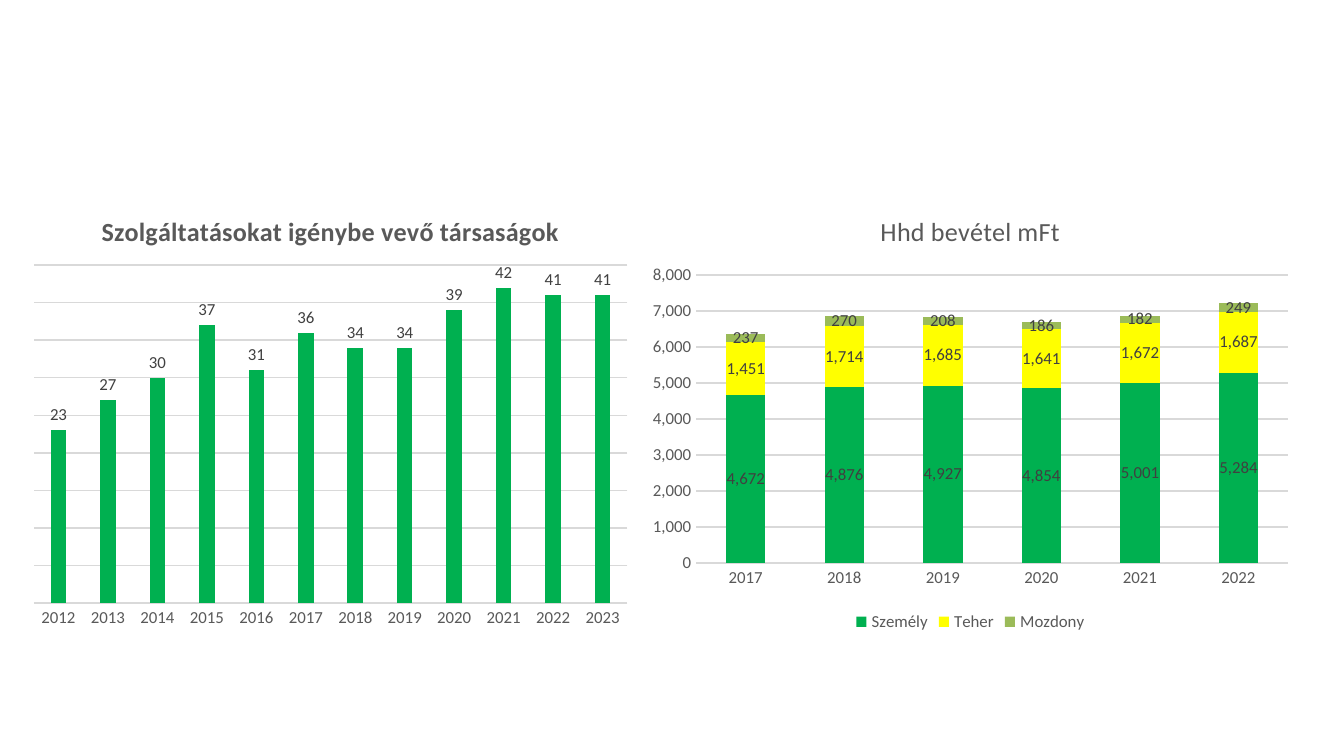
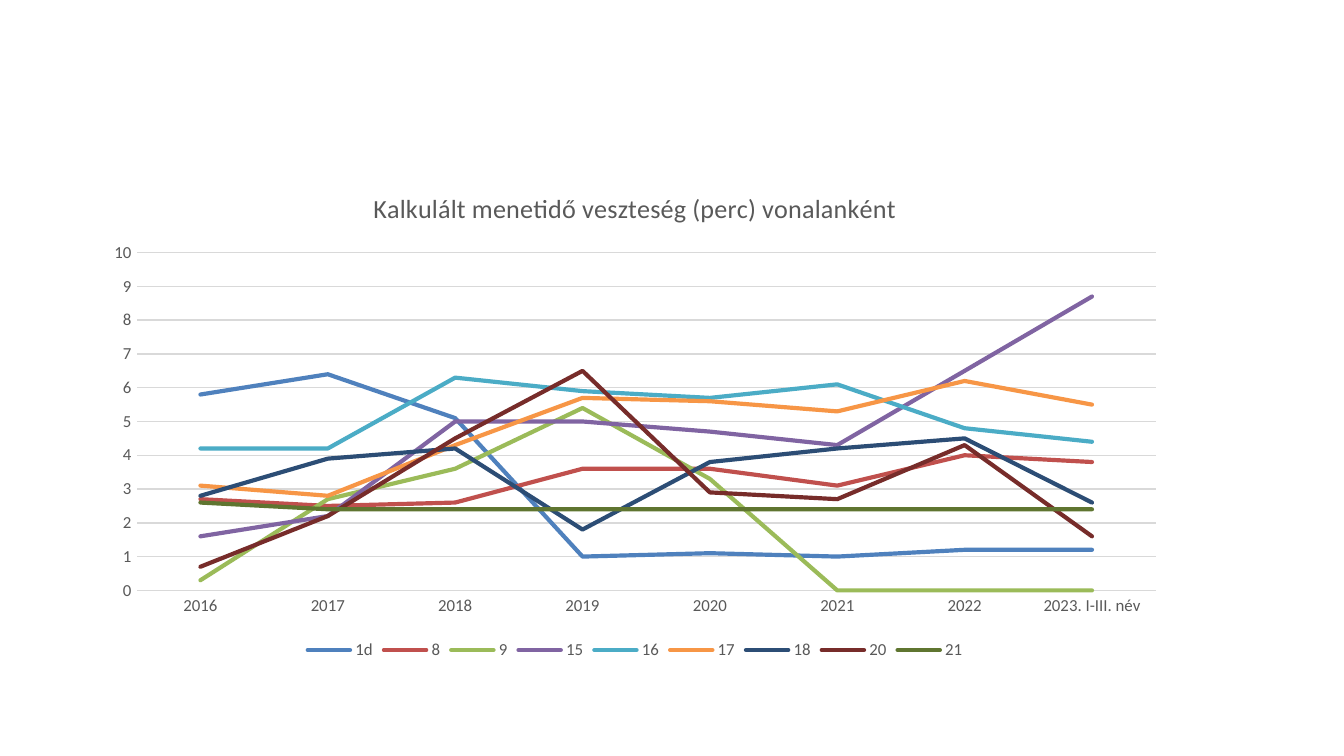
from pptx import Presentation
from pptx import util as u
from pptx.chart import data as chart_data
from pptx.dml import color as dml
from pptx.enum import chart as kinds

FONT = "Calibri"
GREY, DARK, GRID = "595959", "404040", "D9D9D9"
GREEN, YELLOW, OLIVE = "00B050", "FFFF00", "9BBB59"

COMPANY_YEARS = range(2012, 2024)
COMPANIES = [("Series 1", GREEN, [23, 27, 30, 37, 31, 36, 34, 34, 39, 42, 41, 41])]

REVENUE_YEARS = range(2017, 2023)
REVENUE = [
    ("Személy", GREEN, [4672, 4876, 4927, 4854, 5001, 5284]),
    ("Teher", YELLOW, [1451, 1714, 1685, 1641, 1672, 1687]),
    ("Mozdony", OLIVE, [237, 270, 208, 186, 182, 249]),
]

LOSS_PERIODS = [*range(2016, 2023), "2023. I-III. név"]
LOSS = [
    ("1d", "4F81BD", [5.8, 6.4, 5.1, 1, 1.1, 1, 1.2, 1.2]),
    ("8", "C0504D", [2.7, 2.5, 2.6, 3.6, 3.6, 3.1, 4, 3.8]),
    ("9", OLIVE, [0.3, 2.7, 3.6, 5.4, 3.3, 0, 0, 0]),
    ("15", "8064A2", [1.6, 2.2, 5, 5, 4.7, 4.3, 6.5, 8.7]),
    ("16", "4BACC6", [4.2, 4.2, 6.3, 5.9, 5.7, 6.1, 4.8, 4.4]),
    ("17", "F79646", [3.1, 2.8, 4.3, 5.7, 5.6, 5.3, 6.2, 5.5]),
    ("18", "2C4D75", [2.8, 3.9, 4.2, 1.8, 3.8, 4.2, 4.5, 2.6]),
    ("20", "772C2A", [0.7, 2.2, 4.5, 6.5, 2.9, 2.7, 4.3, 1.6]),
    ("21", "5F7530", [2.6, 2.4, 2.4, 2.4, 2.4, 2.4, 2.4, 2.4]),
]


def paint(target, color):
    """Give a shape format or a line one solid colour."""
    target.fill.solid()
    target.fill.fore_color.rgb = dml.RGBColor.from_string(color)


def style_font(font, size, color, bold=False):
    font.name, font.size, font.bold = FONT, u.Pt(size), bold
    font.color.rgb = dml.RGBColor.from_string(color)


def style_line(line, color, width):
    paint(line, color)
    line.width = u.Pt(width)


def style_axes(chart, top, step, number_format):
    for axis in (chart.category_axis, chart.value_axis):
        axis.major_tick_mark = axis.minor_tick_mark = kinds.XL_TICK_MARK.NONE
        style_font(axis.tick_labels.font, 9, GREY)
    style_line(chart.category_axis.format.line, GRID, 0.75)

    values = chart.value_axis
    values.minimum_scale, values.maximum_scale, values.major_unit = 0, top, step
    values.format.line.fill.background()
    values.has_major_gridlines = True
    style_line(values.major_gridlines.format.line, GRID, 0.75)
    values.tick_labels.number_format = number_format
    values.tick_labels.number_format_is_linked = False


def add_legend(chart):
    chart.has_legend = True
    chart.legend.position = kinds.XL_LEGEND_POSITION.BOTTOM
    chart.legend.include_in_layout = False
    style_font(chart.legend.font, 9, GREY)


def add_chart(page, box, kind, title, categories, rows, top, step,
              number_format="General", bold=False):
    """Place a titled chart with styled axes in a box of inches."""
    data = chart_data.CategoryChartData(number_format=number_format)
    data.categories = [str(category) for category in categories]
    for name, _, values in rows:
        data.add_series(name, values)
    chart = page.shapes.add_chart(kind, *map(u.Inches, box), data).chart
    style_font(chart.font, 10, "000000")

    chart.has_title = True
    para = chart.chart_title.text_frame.paragraphs[0]
    para.text = title
    style_font(para.font, 14, GREY, bold)

    style_axes(chart, top, step, number_format)
    chart.has_legend = False
    if len(rows) > 1:
        add_legend(chart)
    chart.plots[0].vary_by_categories = False
    return chart


def style_columns(chart, rows, gap, overlap, label_position):
    plot = chart.plots[0]
    plot.gap_width, plot.overlap = gap, overlap
    for series, (_, color, _) in zip(plot.series, rows):
        paint(series.format, color)
        series.invert_if_negative = False
        labels = series.data_labels
        labels.show_value = True
        labels.position = label_position
        style_font(labels.font, 9, DARK)


def add_companies(page, box):
    chart = add_chart(page, box, kinds.XL_CHART_TYPE.COLUMN_CLUSTERED,
                      "Szolgáltatásokat igénybe vevő társaságok",
                      COMPANY_YEARS, COMPANIES, 45, 5, bold=True)
    chart.value_axis.visible = False
    style_columns(chart, COMPANIES, 219, -27, kinds.XL_LABEL_POSITION.OUTSIDE_END)


def add_revenue(page, box):
    chart = add_chart(page, box, kinds.XL_CHART_TYPE.COLUMN_STACKED,
                      "Hhd bevétel mFt", REVENUE_YEARS, REVENUE, 8000, 1000, "#,##0")
    chart.category_axis.format.line.fill.background()
    style_columns(chart, REVENUE, 150, 100, kinds.XL_LABEL_POSITION.CENTER)


def add_time_loss(page, box):
    chart = add_chart(page, box, kinds.XL_CHART_TYPE.LINE,
                      "Kalkulált menetidő veszteség (perc) vonalanként",
                      LOSS_PERIODS, LOSS, 10, 1)
    for series, (_, color, _) in zip(chart.plots[0].series, LOSS):
        series.smooth = False
        series.marker.style = kinds.XL_MARKER_STYLE.NONE
        style_line(series.format.line, color, 2.25)
    for outline in chart.element.xpath(".//c:ser/c:spPr/a:ln"):
        outline.set("cap", "rnd")


def main():
    deck = Presentation()
    deck.slide_width = u.Inches(10)
    deck.slide_height = deck.slide_width * 9 // 16
    blank = deck.slide_layouts[6]

    page = deck.slides.add_slide(blank)
    add_revenue(page, (4.76, 1.43, 4.92, 3.31))
    add_companies(page, (0.16, 1.43, 4.6, 3.31))

    page = deck.slides.add_slide(blank)
    add_time_loss(page, (0.69, 1.25, 8.07, 3.7))
    deck.save("out.pptx")


if __name__ == "__main__":
    main()
